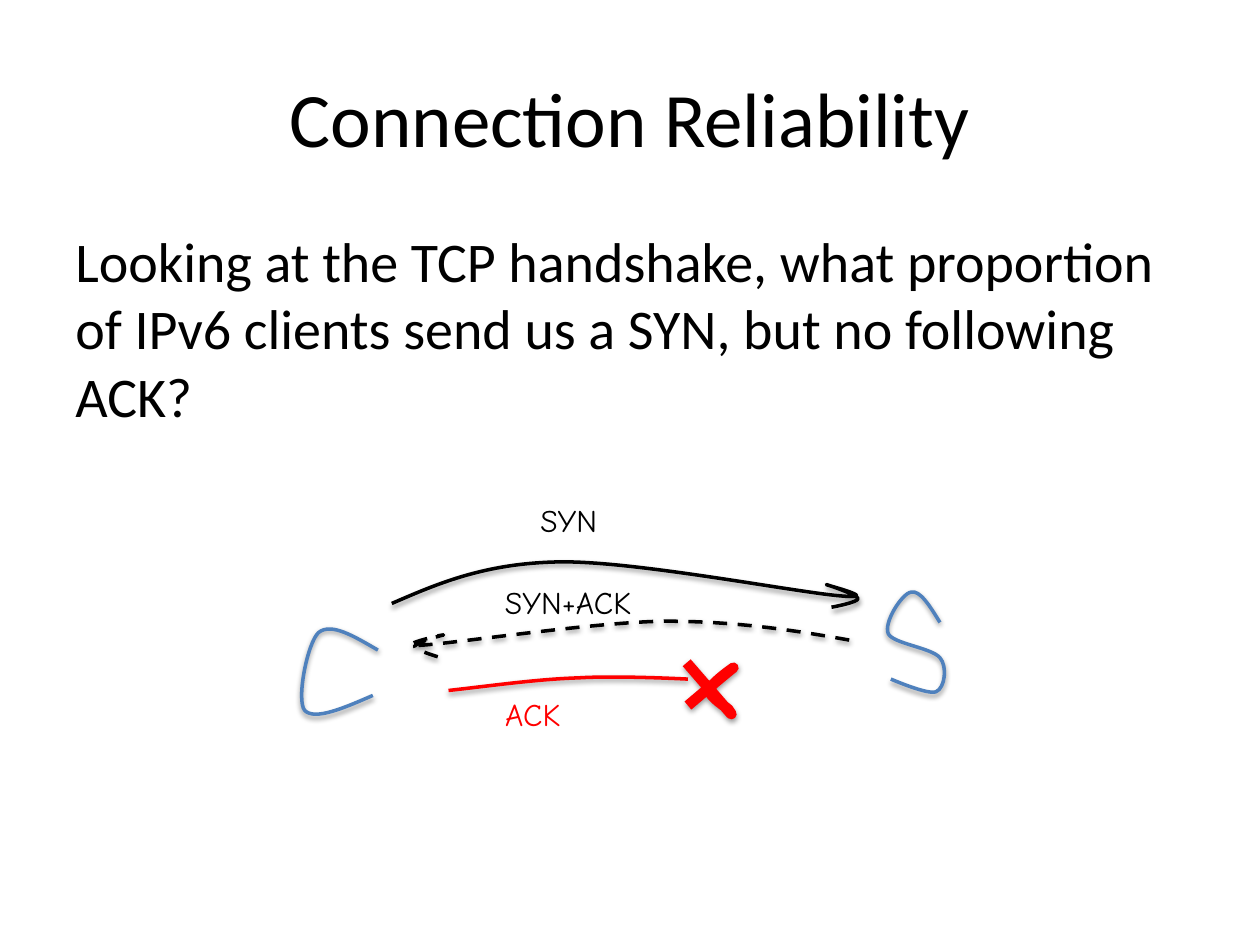
from math import cos, radians, sin

from lxml.etree import SubElement
from pptx import Presentation
from pptx.dml.color import RGBColor
from pptx.enum.dml import MSO_LINE
from pptx.enum.text import MSO_ANCHOR, MSO_AUTO_SIZE, PP_ALIGN
from pptx.oxml.ns import qn
from pptx.util import Inches, Pt

BLACK, BLUE, RED = "000000", "4F81BD", "FF0000"
TITLE = "Connection Reliability"
QUESTION = ("Looking at the TCP handshake, what proportion of IPv6 clients "
            "send us a SYN, but no following ACK?")

LABELS = [
    ("SYN", (4.19, 3.93, 0.79, 0.4), BLACK),
    ("SYN+ACK", (3.91, 4.58, 1.54, 0.4), BLACK),
    ("ACK", (3.91, 5.47, 0.85, 0.4), RED),
]

CLIENT_LETTER = [
    (3, 5.16),
    (2.81, 5.05, 2.63, 4.94, 2.53, 5.02),
    (2.44, 5.1, 2.35, 5.56, 2.42, 5.64),
    (2.5, 5.72, 2.73, 5.62, 2.96, 5.52),
]
SERVER_LETTER = [
    (7.46, 4.94),
    (7.38, 4.81, 7.3, 4.68, 7.23, 4.7),
    (7.16, 4.71, 7.01, 4.94, 7.05, 5.03),
    (7.09, 5.11, 7.39, 5.14, 7.46, 5.22),
    (7.52, 5.29, 7.5, 5.46, 7.43, 5.49),
    (7.37, 5.52, 7.07, 5.39, 7.07, 5.39),
]
SYN_ARROW = [
    (3.11, 4.79),
    (3.48, 4.63, 3.85, 4.47, 4.44, 4.46),
    (5.03, 4.45, 6.31, 4.7, 6.67, 4.73),
    (7.02, 4.76, 6.54, 4.64, 6.56, 4.64),
    (6.59, 4.65, 6.8, 4.72, 6.81, 4.75),
    (6.82, 4.78, 6.6, 4.82, 6.6, 4.82),
]
SYN_ACK_ARROW = [
    (6.74, 5.08),
    (6.29, 5, 5.83, 4.93, 5.27, 4.93),
    (4.7, 4.94, 3.65, 5.1, 3.36, 5.12),
    (3.07, 5.14, 3.53, 5.03, 3.52, 5.04),
    (3.51, 5.04, 3.3, 5.1, 3.29, 5.13),
    (3.29, 5.16, 3.5, 5.22, 3.5, 5.22),
]
ACK_LINE = [
    (3.56, 5.48),
    (3.92, 5.44, 4.27, 5.39, 4.59, 5.38),
    (4.9, 5.36, 5.46, 5.39, 5.46, 5.39),
    (5.46, 5.39),
]
LOST_CROSS = [
    (5.45, 5.26),
    (5.77, 5.63),
    (5.83, 5.7, 5.8, 5.66, 5.78, 5.63),
    (5.76, 5.61, 5.63, 5.53, 5.63, 5.48),
    (5.64, 5.42, 5.85, 5.28, 5.82, 5.3),
    (5.79, 5.32, 5.46, 5.6, 5.46, 5.6),
]
STROKES = [
    (CLIENT_LETTER, (2.36, 4.98, 0.66, 0.66), {"color": BLUE, "rotation": 350.3}),
    (SERVER_LETTER, (7.04, 4.69, 0.45, 0.8), {"color": BLUE}),
    (SYN_ARROW, (3.11, 4.46, 3.7, 0.37), {"color": BLACK}),
    (SYN_ACK_ARROW, (3.26, 4.93, 3.48, 0.29), {"color": BLACK, "dashed": True}),
    (ACK_LINE, (3.56, 5.37, 1.89, 0.11), {"color": RED}),
    (LOST_CROSS, (5.45, 5.26, 0.38, 0.41), {"color": RED, "width": 6}),
]


def rgb(value):
    return RGBColor.from_string(value)


def place(shape, bounds):
    shape.left, shape.top, shape.width, shape.height = map(Inches, bounds)


def write(shape, text, size, font="Calibri", color=BLACK, align=None,
          anchor=MSO_ANCHOR.TOP, wrap=True, fit=MSO_AUTO_SIZE.NONE):
    frame = shape.text_frame
    frame.word_wrap, frame.auto_size = wrap, fit
    frame.vertical_anchor = anchor
    para = frame.paragraphs[0]
    para.alignment = align
    span = para.add_run()
    span.text = text
    span.font.name, span.font.size = font, Pt(size)
    span.font.color.rgb = rgb(color)


def turn(x, y, center, degrees):
    angle = radians(degrees)
    across, down = x - center[0], y - center[1]
    return (center[0] + across * cos(angle) - down * sin(angle),
            center[1] + across * sin(angle) + down * cos(angle))


def bend(shape, segments, bounds, rotation):
    left, top, width, height = bounds
    center = left + width / 2, top + height / 2
    outline = shape._element.spPr.find(".//" + qn("a:path"))
    for command in list(outline):
        outline.remove(command)
    outline.set("w", str(Inches(width)))
    outline.set("h", str(Inches(height)))
    for index, segment in enumerate(segments):
        name = "a:cubicBezTo" if len(segment) == 6 else "a:lnTo" if index else "a:moveTo"
        command = SubElement(outline, qn(name))
        for x, y in zip(segment[::2], segment[1::2]):
            x, y = turn(x, y, center, -rotation)
            SubElement(command, qn("a:pt"), x=str(Inches(x - left)), y=str(Inches(y - top)))


def add_shadow(shape):
    shape.shadow.inherit = False
    effects = shape._element.spPr.find(qn("a:effectLst"))
    shadow = SubElement(effects, qn("a:outerShdw"), blurRad=str(Pt(3.1)),
                        dist=str(Pt(1.6)), dir="5400000", rotWithShape="0")
    shade = SubElement(shadow, qn("a:srgbClr"), val=BLACK)
    SubElement(shade, qn("a:alpha"), val="38000")


def draw_stroke(page, segments, bounds, color, width=2, dashed=False, rotation=0):
    start, *rest = [tuple(map(Inches, segment[-2:])) for segment in segments]
    builder = page.shapes.build_freeform(*start)
    builder.add_line_segments(rest, close=False)
    stroke = builder.convert_to_shape()
    place(stroke, bounds)
    bend(stroke, segments, bounds, rotation)
    stroke.rotation = rotation
    stroke.fill.background()
    stroke.line.color.rgb = rgb(color)
    stroke.line.width = Pt(width)
    if dashed:
        stroke.line.dash_style = MSO_LINE.DASH
    add_shadow(stroke)


def main():
    deck = Presentation()
    deck.slide_width, deck.slide_height = Inches(10), Inches(7.5)
    page = deck.slides.add_slide(deck.slide_layouts[5])
    title = page.shapes.title
    place(title, (0.5, 0.3, 9, 1.25))
    write(title, TITLE, 44, align=PP_ALIGN.CENTER, anchor=MSO_ANCHOR.MIDDLE)
    question = page.shapes.add_textbox(*map(Inches, (0.5, 1.75, 9, 4.95)))
    write(question, QUESTION, 32)
    for segments, bounds, style in STROKES:
        draw_stroke(page, segments, bounds, **style)
    for text, bounds, color in LABELS:
        label = page.shapes.add_textbox(*map(Inches, bounds))
        write(label, text, 18, font="Comic Neue", color=color, wrap=False,
              fit=MSO_AUTO_SIZE.SHAPE_TO_FIT_TEXT)
    deck.save("out.pptx")


if __name__ == "__main__":
    main()
